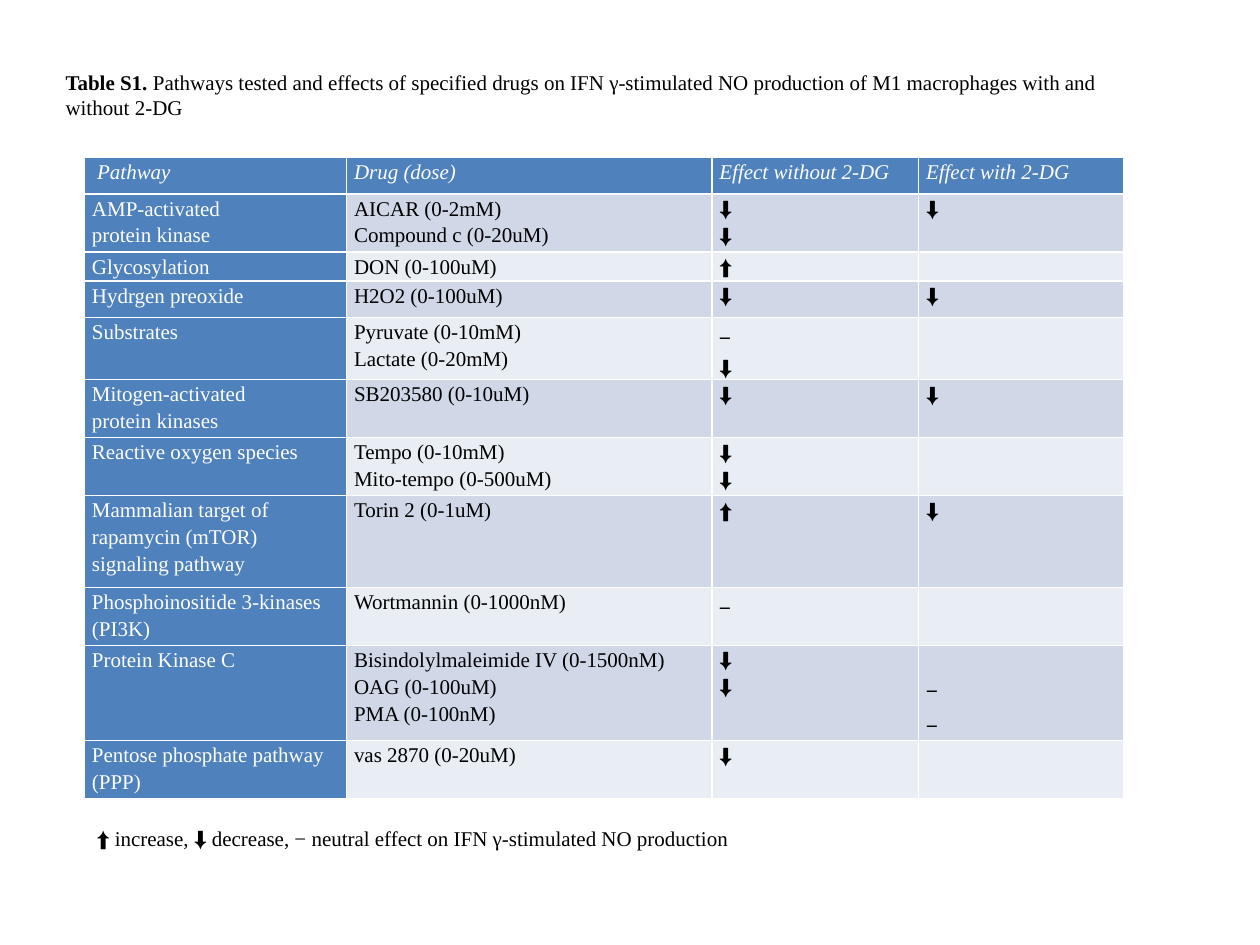
import lxml.etree
import pptx
import pptx.dml.color
import pptx.enum.text
import pptx.oxml.ns
import pptx.util

Inches, Pt = pptx.util.Inches, pptx.util.Pt
RGBColor = pptx.dml.color.RGBColor
BLACK = RGBColor(0x00, 0x00, 0x00)
WHITE = RGBColor(0xFF, 0xFF, 0xFF)
BLUE = RGBColor(0x4F, 0x81, 0xBD)
BANDS = [RGBColor(0xD0, 0xD8, 0xE8), RGBColor(0xE9, 0xED, 0xF4)]
TEXT_FONT = "Times New Roman"
SYMBOL_FONTS = {"⬆": "Arial", "⬇": "Arial", "−": "Noto Sans CJK JP"}


def format_span(span, color, name=TEXT_FONT, bold=False, italic=False):
    span.font.size = Pt(12)
    span.font.name = name
    span.font.color.rgb = color
    span.font.bold = bold
    span.font.italic = italic


deck = pptx.Presentation()
deck.slide_width, deck.slide_height = Inches(10), Inches(7.5)
page = deck.slides.add_slide(deck.slide_layouts[5])

# Caption in the title placeholder
title = page.shapes.title
title.left, title.top = Inches(0.42), Inches(0.5)
title.width, title.height = Inches(8.75), Inches(0.5)
title.text_frame.vertical_anchor = pptx.enum.text.MSO_ANCHOR.TOP
title.text_frame.auto_size = pptx.enum.text.MSO_AUTO_SIZE.NONE
para = title.text_frame.paragraphs[0]
para.alignment = pptx.enum.text.PP_ALIGN.LEFT
for text, bold in [
    ("Table S1. ", True),
    ("Pathways tested and effects of specified drugs on IFN γ-stimulated NO "
     "production of M1 macrophages with and without 2-DG", False),
]:
    span = para.add_run()
    span.text = text
    format_span(span, BLACK, bold=bold)

# Table content: row height, then the four cells
rows = [
    (0.29, "\u00a0Pathway", "Drug (dose)", "Effect without 2-DG", "Effect with 2-DG"),
    (0.46, "AMP-activated\nprotein kinase", "AICAR (0-2mM)\nCompound c (0-20uM)", "⬇\n⬇", "⬇"),
    (0.23, "Glycosylation", "DON (0-100uM)", "⬆", ""),
    (0.29, "Hydrgen preoxide", "H2O2 (0-100uM)", "⬇", "⬇"),
    (0.46, "Substrates", "Pyruvate (0-10mM)\nLactate (0-20mM)", "−\n⬇", ""),
    (0.46, "Mitogen-activated\nprotein kinases", "SB203580 (0-10uM)", "⬇", "⬇"),
    (0.46, "Reactive oxygen species", "Tempo (0-10mM)\nMito-tempo (0-500uM)", "⬇\n⬇", ""),
    (0.73, "Mammalian target of rapamycin (mTOR) signaling pathway", "Torin 2 (0-1uM)", "⬆", "⬇"),
    (0.46, "Phosphoinositide 3-kinases (PI3K)", "Wortmannin (0-1000nM)", "−", ""),
    (0.69, "Protein Kinase C",
     "Bisindolylmaleimide IV (0-1500nM)\nOAG (0-100uM)\nPMA (0-100nM)", "⬇\n⬇", "−\n−"),
    (0.46, "Pentose phosphate pathway (PPP)", "vas 2870 (0-20uM)", "⬇", ""),
]
widths = [2.08, 2.9, 1.64, 1.63]

# Pathway table; the default style draws the white borders
table = page.shapes.add_table(
    len(rows), len(widths), Inches(0.67), Inches(1.25),
    Inches(sum(widths)), Inches(sum(row[0] for row in rows))).table
table.first_col = True
for column, width in zip(table.columns, widths):
    column.width = Inches(width)

for r, (height, *texts) in enumerate(rows):
    table.rows[r].height = Inches(height)
    for c, text in enumerate(texts):
        cell = table.cell(r, c)
        is_head = r == 0 or c == 0
        cell.fill.solid()
        cell.fill.fore_color.rgb = BLUE if is_head else BANDS[(r - 1) % 2]
        cell.margin_left = cell.margin_right = Inches(0.06)
        cell.margin_top = cell.margin_bottom = 0
        # The two neutral marks stand beside the second and third drug
        if text == "−\n−":
            cell.margin_top = Inches(0.2)
        cell.text_frame.text = text
        for para in cell.text_frame.paragraphs:
            para.line_spacing = 1.15
            for span in para.runs:
                format_span(span, WHITE if is_head else BLACK,
                            SYMBOL_FONTS.get(span.text, TEXT_FONT), italic=r == 0)
            if not para.runs:
                # Keeps empty cells from stretching the row
                lxml.etree.SubElement(
                    para._p, pptx.oxml.ns.qn("a:endParaRPr"), sz="1200")

# Legend
legend = page.shapes.add_textbox(Inches(0.67), Inches(6.5), Inches(8.33), Inches(0.3))
legend.text_frame.word_wrap = True
legend.text_frame.text = (
    "⬆ increase, ⬇ decrease, − neutral effect on IFN γ-stimulated NO production")
format_span(legend.text_frame.paragraphs[0].runs[0], BLACK)

deck.save("out.pptx")
